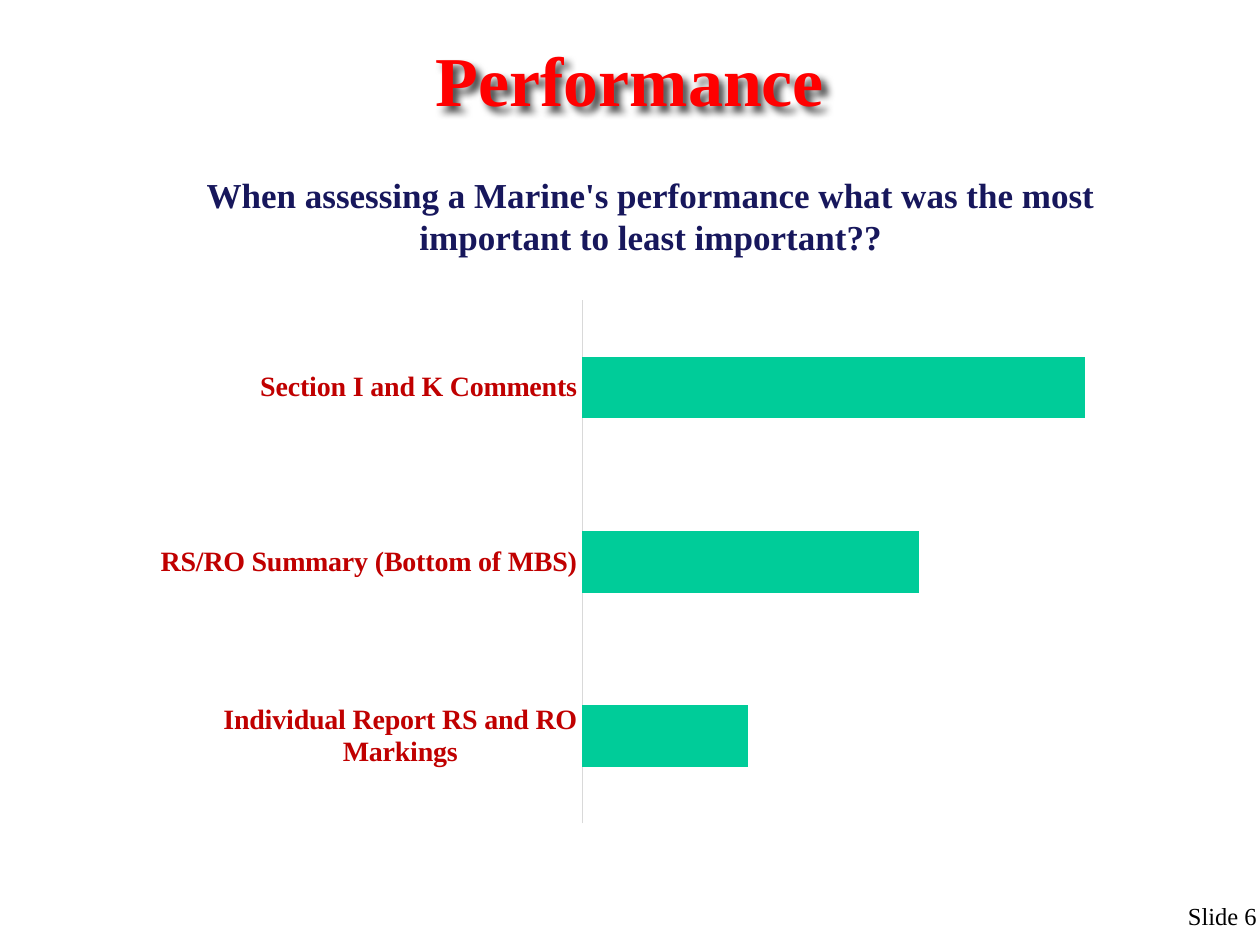
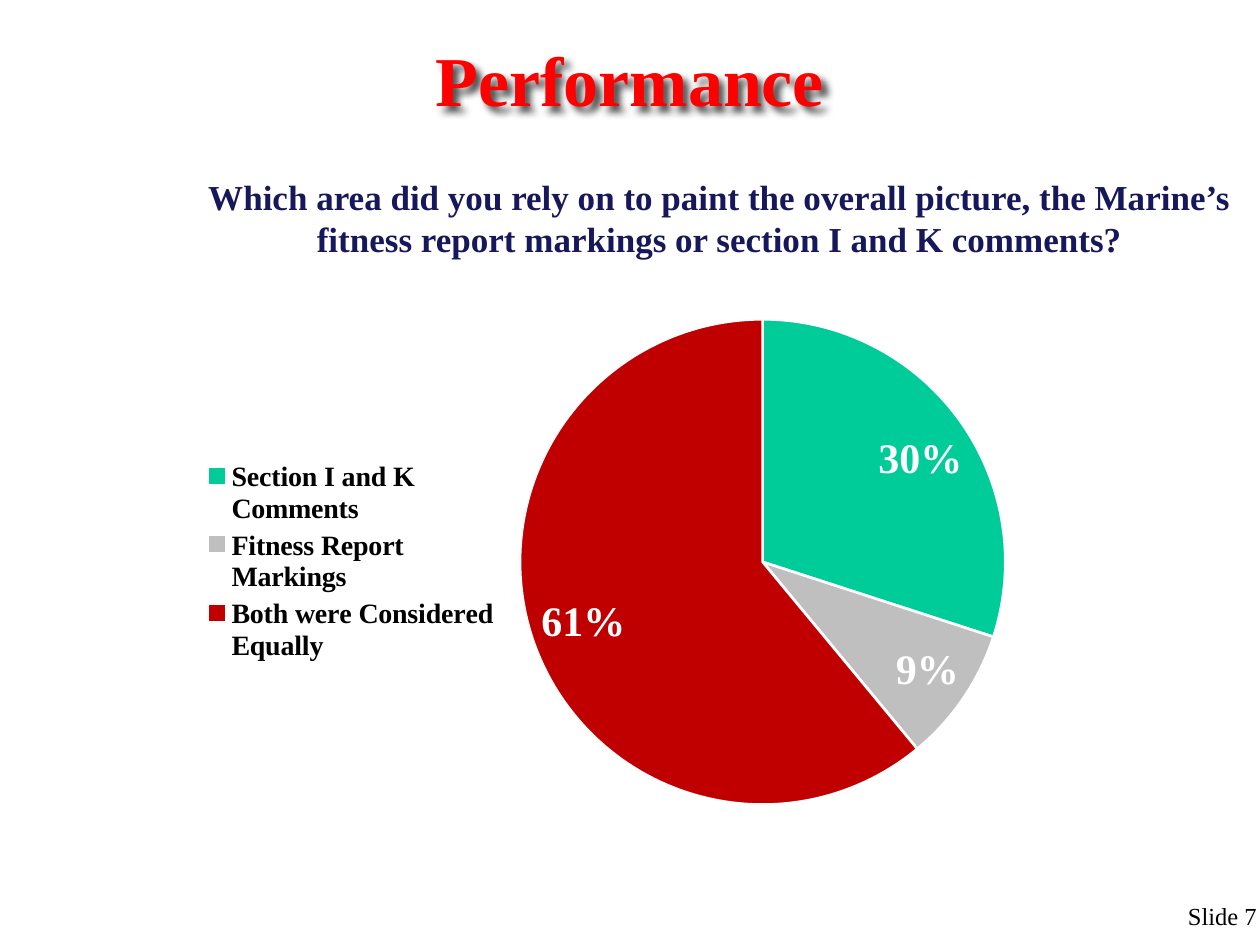
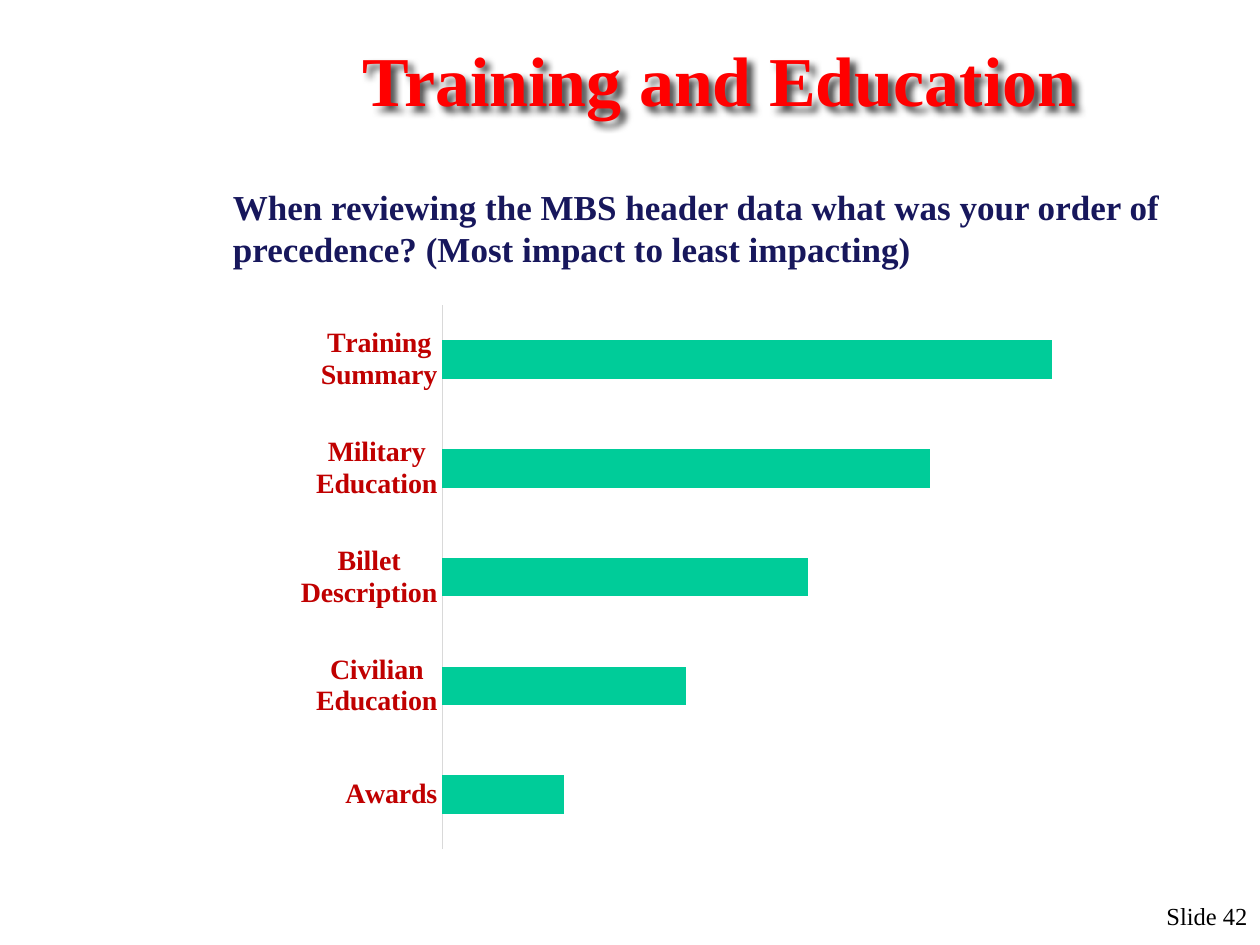
from lxml import etree
from pptx import Presentation
from pptx import util as u
from pptx.chart.data import CategoryChartData
from pptx.dml.color import RGBColor
from pptx.enum import chart as ch, text
from pptx.oxml import parse_xml
from pptx.oxml.ns import nsdecls, qn

FONT = "Times New Roman"
COLORS = {name: RGBColor.from_string(value) for name, value in {
    "title": "FF0000", "outline": "8E0000", "question": "17175C",
    "black": "000000", "white": "FFFFFF", "label": "C00000",
    "green": "00CC99", "gray": "BFBFBF", "axis": "D9D9D9"}.items()}
ALIGN = text.PP_ALIGN
TITLE_OUTLINE = (f'<a:ln {nsdecls("a")} w="9525"><a:solidFill>'
                 f'<a:srgbClr val="{COLORS["outline"]}"/></a:solidFill></a:ln>')
TITLE_SHADOW = (f'<a:effectLst {nsdecls("a")}><a:outerShdw blurRad="50800" dist="50800" '
                'dir="2700000" algn="tl" rotWithShape="0"><a:srgbClr val="000000">'
                '<a:alpha val="70000"/></a:srgbClr></a:outerShdw></a:effectLst>')

PAGES = [
    {"title": "Performance", "title_left": 0,
     "question": "When assessing a Marine's performance what was the most "
                 "important to least important??",
     "question_at": (1.08, 1.33, 8.17, 0.77), "question_align": ALIGN.CENTER,
     "number": "Slide 6", "number_left": 9.33, "number_align": ALIGN.LEFT,
     "kind": ch.XL_CHART_TYPE.BAR_CLUSTERED, "chart_at": (1.04, 1.73, 8.25, 5.08),
     "values": {"Individual Report RS and RO Markings": 33,
                "RS/RO Summary (Bottom of MBS)": 67,
                "Section I and K Comments": 100},
     "plot": (0.434, 0.129, 0.566, 0.817), "axis_max": 117},
    {"title": "Performance", "title_left": 0,
     "question": "Which area did you rely on to paint the overall picture, the Marine’s "
                 "fitness report markings or section I and K comments?",
     "question_at": (1.42, 1.34, 8.58, 0.77), "question_align": ALIGN.CENTER,
     "number": "Slide 7", "number_left": 9.33, "number_align": ALIGN.LEFT,
     "kind": ch.XL_CHART_TYPE.PIE, "chart_at": (1.5, 2, 7, 4.92),
     "values": {"Section I and K Comments": 0.3,
                "Fitness Report Markings": 0.09,
                "Both were Considered Equally": 0.61}},
    {"title": "Training and Education", "title_left": 1.42,
     "question": "When reviewing the MBS header data what was your order of "
                 "precedence? (Most impact to least impacting)",
     "question_at": (1.75, 1.42, 8, 0.67), "question_align": ALIGN.LEFT,
     "number": "Slide 42", "number_left": 7.61, "number_align": ALIGN.RIGHT,
     "kind": ch.XL_CHART_TYPE.BAR_CLUSTERED, "chart_at": (1.92, 2.19, 7.83, 4.81),
     "values": {"Awards": 20, "Civilian Education": 40, "Billet Description": 60,
                "Military Education": 80, "Training Summary": 100},
     "plot": (0.203, 0.048, 0.742, 0.898), "axis_max": 120},
]


def style_font(font, size, color, bold=True):
    font.name, font.size, font.bold = FONT, u.Pt(size), bold
    font.color.rgb = COLORS[color]


def write(box, place, words, align, size, color, bold=True):
    """Place a box and fill it with one styled run, which is returned."""
    box.left, box.top, box.width, box.height = map(u.Inches, place)
    box.text_frame.word_wrap = True
    para = box.text_frame.paragraphs[0]
    para.alignment = align
    span = para.add_run()
    span.text = words
    style_font(span.font, size, color, bold)
    return span


deck = Presentation()
deck.slide_width, deck.slide_height = u.Inches(10), u.Inches(7.5)

for content in PAGES:
    page = deck.slides.add_slide(deck.slide_layouts[5])

    title = page.shapes.title
    left = content["title_left"]
    span = write(title, (left, 0.33, 10 - left, 0.58), content["title"],
                 ALIGN.CENTER, 40, "title")
    title.text_frame.vertical_anchor = text.MSO_ANCHOR.MIDDLE
    title.text_frame.auto_size = text.MSO_AUTO_SIZE.NONE
    span.font._element.insert(0, parse_xml(TITLE_OUTLINE))
    title._element.spPr.append(parse_xml(TITLE_SHADOW))

    number = page.shapes.add_textbox(0, 0, 0, 0)
    write(number, (content["number_left"], 7.1, 2.39, 0.4), content["number"],
          content["number_align"], 14, "black", bold=False)
    question = page.shapes.add_textbox(0, 0, 0, 0)
    write(question, content["question_at"], content["question"],
          content["question_align"], 20, "question")

    data = CategoryChartData()
    data.categories = list(content["values"])
    data.add_series("Series 1", list(content["values"].values()))
    chart = page.shapes.add_chart(
        content["kind"], *map(u.Inches, content["chart_at"]), data).chart
    chart.has_title = False
    chart.font.name, chart.font.size = "Arial", u.Pt(10)
    chart.font.color.rgb = COLORS["black"]
    plot = chart.plots[0]
    series = plot.series[0]

    if content["kind"] == ch.XL_CHART_TYPE.PIE:
        plot.vary_by_categories = True
        for index, color in enumerate(("green", "gray", "label")):
            slice_format = series.points[index].format
            slice_format.fill.solid()
            slice_format.fill.fore_color.rgb = COLORS[color]
            slice_format.line.color.rgb = COLORS["white"]
            slice_format.line.width = u.Pt(1.5)
        labels = series.data_labels
        labels.show_value = True
        labels.number_format, labels.number_format_is_linked = "0%", False
        labels.position = ch.XL_LABEL_POSITION.BEST_FIT
        style_font(labels.font, 24, "white")
        chart.has_legend = True
        chart.legend.position = ch.XL_LEGEND_POSITION.LEFT
        chart.legend.include_in_layout = False
        style_font(chart.legend.font, 16, "black")
    else:
        chart.has_legend = False
        plot.vary_by_categories = False
        plot.gap_width = 182
        series.format.fill.solid()
        series.format.fill.fore_color.rgb = COLORS["green"]
        categories, amounts = chart.category_axis, chart.value_axis
        categories.major_tick_mark = ch.XL_TICK_MARK.NONE
        categories.format.line.color.rgb = COLORS["axis"]
        categories.format.line.width = u.Pt(0.75)
        style_font(categories.tick_labels.font, 16, "label")
        amounts.minimum_scale, amounts.maximum_scale = 0, content["axis_max"]
        amounts.has_major_gridlines = False
        amounts.visible = False

        plot_area = chart._chartSpace.chart.plotArea
        for old in plot_area.findall(qn("c:layout")):
            plot_area.remove(old)
        layout = etree.Element(qn("c:layout"))
        manual = etree.SubElement(layout, qn("c:manualLayout"))
        settings = [("layoutTarget", "inner"), ("xMode", "edge"), ("yMode", "edge"),
                    *zip("xywh", content["plot"])]
        for tag, value in settings:
            etree.SubElement(manual, qn(f"c:{tag}")).set("val", str(value))
        plot_area.insert(0, layout)

deck.save("out.pptx")
